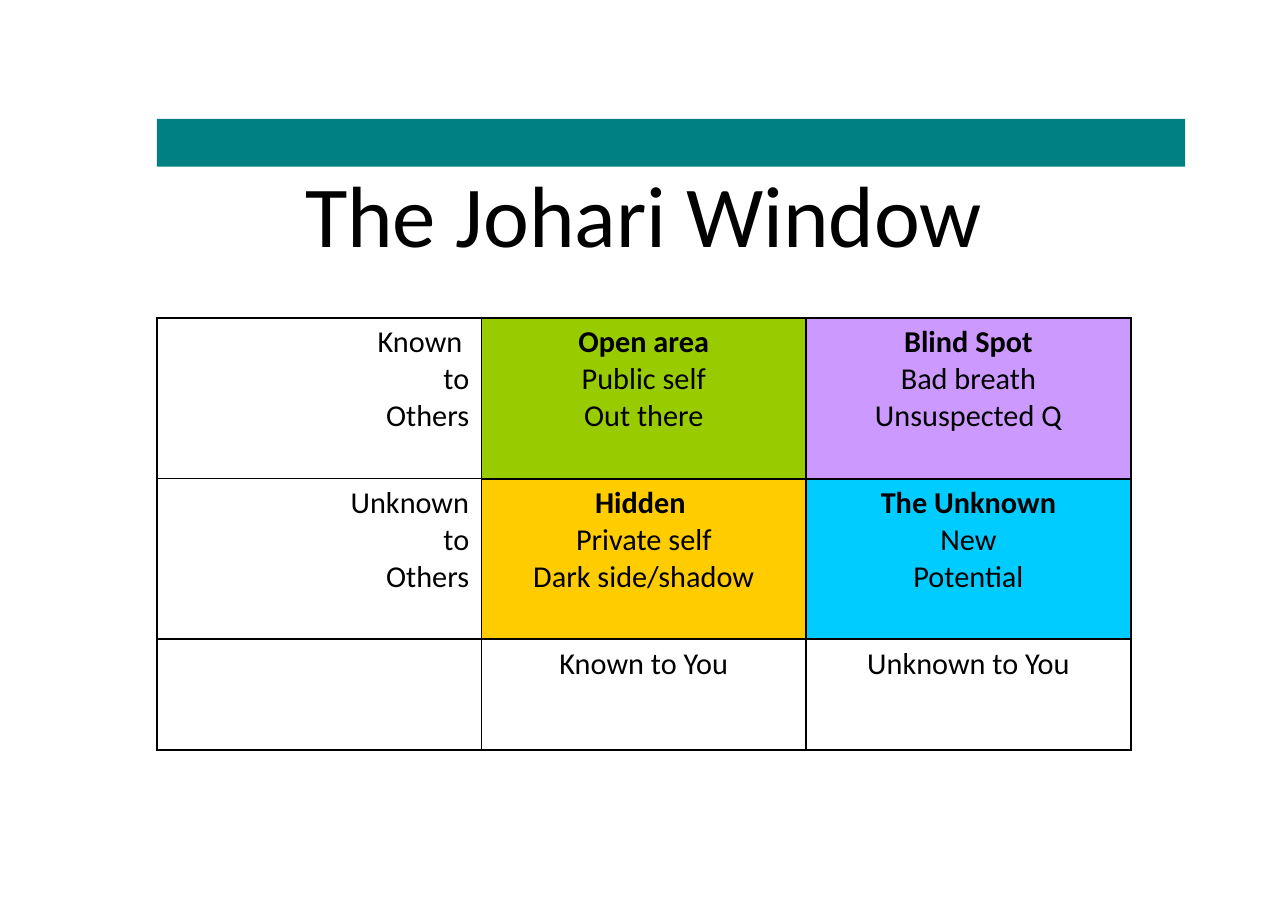
from lxml import etree
from pptx import Presentation, util as u
from pptx.dml import color
from pptx.enum import shapes, text
from pptx.oxml import ns

FONT = "Calibri"
LEFT, WIDE = 2.56, 15.9
CELLS = [
    [["Known ", "to", "Others"],
     ["Open area", "Public self", "Out there"],
     ["Blind Spot", "Bad breath", "Unsuspected Q"]],
    [["Unknown", "to", "Others"],
     ["Hidden ", "Private self", "Dark side/shadow"],
     ["The Unknown", "New", "Potential"]],
    [[], ["Known to You"], ["Unknown to You"]],
]
PANES = {(0, 1): "99CC00", (0, 2): "CC99FF",
         (1, 1): "FFCC00", (1, 2): "00CCFF"}
SIDES = {"L": (0, -1), "R": (0, 1), "T": (-1, 0), "B": (1, 0)}


def rgb(code):
    """Turn a hex string into a colour."""
    return color.RGBColor.from_string(code)


def paint(item, code):
    """Give a shape or cell a solid fill."""
    item.fill.solid()
    item.fill.fore_color.rgb = rgb(code)


def place(item, left, top, width, height):
    """Set position and size in centimetres."""
    item.left, item.top = u.Cm(left), u.Cm(top)
    item.width, item.height = u.Cm(width), u.Cm(height)


def write(para, words, size, align, bold=False):
    """Add one formatted run to a paragraph."""
    para.alignment = align
    run = para.add_run()
    run.text = words
    run.font.name = FONT
    run.font.size = u.Pt(size)
    run.font.bold = bold
    run.font.color.rgb = rgb("000000")


def edge(cell, side, width):
    """Draw one black border of a cell."""
    props = cell._tc.get_or_add_tcPr()
    line = etree.SubElement(props, ns.qn(f"a:ln{side}"), w=str(u.Pt(width)))
    fill = etree.SubElement(line, ns.qn("a:solidFill"))
    etree.SubElement(fill, ns.qn("a:srgbClr"), val="000000")


def title(slide, words):
    """Fill and place the title."""
    box = slide.shapes.title
    place(box, LEFT, 2.49, WIDE, 1.83)
    frame = box.text_frame
    frame.auto_size = text.MSO_AUTO_SIZE.NONE
    frame.vertical_anchor = text.MSO_ANCHOR.TOP
    frame.margin_top, frame.margin_bottom = u.Cm(0.13), u.Cm(0)
    write(frame.paragraphs[0], words, 40.2, text.PP_ALIGN.CENTER)


def pane(cell, row, col, lines):
    """Format one cell and write its lines."""
    spot = (row, col)
    for side, (down, right) in SIDES.items():
        near = (row + down, col + right)
        edge(cell, side, 1 if spot in PANES or near in PANES else 0.75)
    paint(cell, PANES.get(spot, "FFFFFF"))
    cell.margin_left = cell.margin_right = u.Cm(0.2)
    cell.margin_top = cell.margin_bottom = u.Cm(0.1)
    align = text.PP_ALIGN.CENTER if col else text.PP_ALIGN.RIGHT
    frame = cell.text_frame
    for num, line in enumerate(lines):
        para = frame.add_paragraph() if num else frame.paragraphs[0]
        write(para, line, 14, align, spot in PANES and num == 0)


def grid(slide):
    """Build the window table."""
    high = [2.62, 2.62, 1.81]
    table = slide.shapes.add_table(
        3, 3, u.Cm(LEFT), u.Cm(5.19), u.Cm(WIDE), u.Cm(sum(high))).table
    table.first_row = table.horz_banding = False
    for row, height in enumerate(high):
        table.rows[row].height = u.Cm(height)
        for col, lines in enumerate(CELLS[row]):
            pane(table.cell(row, col), row, col, lines)


def band(slide):
    """Add the teal bar above the title."""
    bar = slide.shapes.add_shape(
        shapes.MSO_SHAPE.RECTANGLE, u.Cm(LEFT), u.Cm(1.94),
        u.Cm(16.79), u.Cm(0.78))
    bar.shadow.inherit = False
    paint(bar, "008080")
    bar.line.fill.background()


def main():
    """Build and save the slide."""
    deck = Presentation()
    deck.slide_width, deck.slide_height = u.Pt(596), u.Pt(420)
    slide = deck.slides.add_slide(deck.slide_layouts[5])
    title(slide, "The Johari Window")
    grid(slide)
    band(slide)
    deck.save("out.pptx")


if __name__ == "__main__":
    main()
